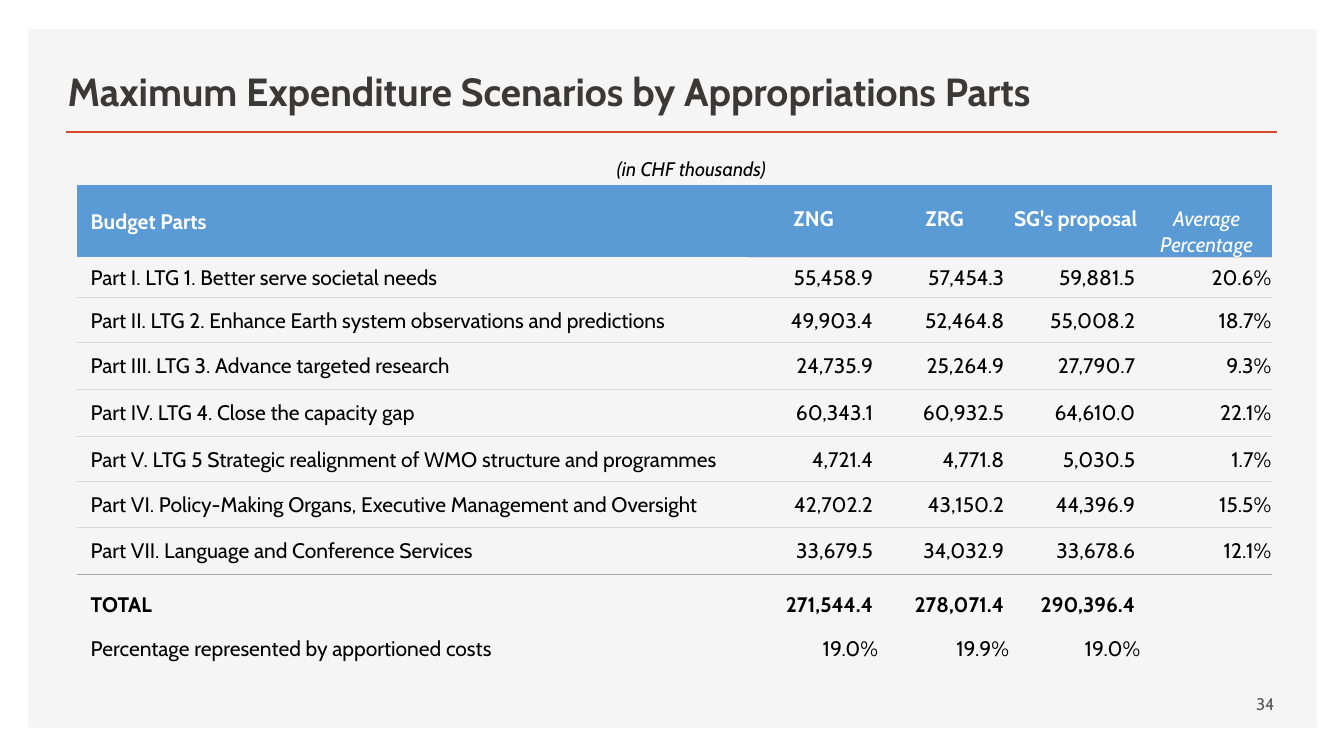
"""Build the slide of maximum expenditure scenarios by appropriations parts."""
from lxml.etree import SubElement
from pptx import Presentation
from pptx.dml.color import RGBColor
from pptx.enum.shapes import MSO_CONNECTOR, MSO_SHAPE
from pptx.enum.text import MSO_ANCHOR, PP_ALIGN
from pptx.oxml import parse_xml
from pptx.oxml.ns import nsdecls, qn
from pptx.util import Inches, Pt

COLOURS = {"panel": "F5F5F5", "accent": "D24726", "title": "3B3838", "number": "595959",
           "header": "5B9BD5", "white": "FFFFFF", "black": "000000",
           "rule": "D9D9D9", "total_rule": "A6A6A6"}
HEADINGS = ["Budget Parts", "ZNG", "ZRG", "SG's proposal", "Average Percentage"]
BUDGET = [
    ["Part I. LTG 1. Better serve societal needs", "55,458.9", "57,454.3", "59,881.5", "20.6%"],
    ["Part II. LTG 2. Enhance Earth system observations and predictions",
     "49,903.4", "52,464.8", "55,008.2", "18.7%"],
    ["Part III. LTG 3. Advance targeted research", "24,735.9", "25,264.9", "27,790.7", "9.3%"],
    ["Part IV. LTG 4. Close the capacity gap", "60,343.1", "60,932.5", "64,610.0", "22.1%"],
    ["Part V. LTG 5 Strategic realignment of WMO structure and programmes",
     "4,721.4", "4,771.8", "5,030.5", "1.7%"],
    ["Part VI. Policy-Making Organs, Executive Management and Oversight",
     "42,702.2", "43,150.2", "44,396.9", "15.5%"],
    ["Part VII. Language and Conference Services", "33,679.5", "34,032.9", "33,678.6", "12.1%"],
    ["TOTAL", "271,544.4", "278,071.4", "290,396.4", ""],
    ["Percentage represented by apportioned costs", "19.0%", "19.9%", "19.0%", ""],
]
COLUMN_SHARES = [49.96] + [9.75] * 4
ROW_SHARES = [2.67, 6.8, 5.33, 6, 6.13, 6.27, 6, 6, 6.27, 8, 3.6]

deck = Presentation()
deck.slide_width, deck.slide_height = Inches(13.33), Inches(7.5)
page = deck.slides.add_slide(deck.slide_layouts[5])


def area(*percents):
    """Turn percentages of the slide's width and height, in turn, into lengths."""
    sides = (deck.slide_width, deck.slide_height)
    return [int(sides[index % 2] * percent / 100) for index, percent in enumerate(percents)]


def write(frame, text, size, colour, align=PP_ALIGN.LEFT, bold=False, italic=False):
    """Put one styled paragraph into a text frame."""
    frame.text = text
    para = frame.paragraphs[0]
    para.alignment = align
    for span in para.runs:
        span.font.name, span.font.size = "Cabin", Pt(size)
        span.font.bold, span.font.italic = bold, italic
        span.font.color.rgb = RGBColor.from_string(COLOURS[colour])


panel = page.shapes.add_shape(MSO_SHAPE.RECTANGLE, *area(2.1, 3.87, 95.87, 92.4))
panel.shadow.inherit = False
panel.fill.solid()
panel.fill.fore_color.rgb = RGBColor.from_string(COLOURS["panel"])
panel.line.fill.background()
page.shapes._spTree.insert(2, panel._element)

title_rule = page.shapes.add_connector(MSO_CONNECTOR.STRAIGHT, *area(4.95, 17.47, 95.05, 17.47))
title_rule.line.color.rgb = RGBColor.from_string(COLOURS["accent"])
title_rule.line.width = Pt(2)
SubElement(title_rule._element.spPr, qn("a:effectLst"))

title = page.shapes.title
title.left, title.top, title.width, title.height = area(4.28, 6.53, 86.5, 9.33)
title.text_frame.vertical_anchor = MSO_ANCHOR.BOTTOM
write(title.text_frame, "Maximum Expenditure Scenarios by Appropriations Parts", 28, "title", bold=True)

page_number = page.shapes.add_textbox(*area(68.72, 90.4, 26.86, 5.33))
page_number.text_frame.word_wrap = True
page_number.text_frame.vertical_anchor = MSO_ANCHOR.MIDDLE
write(page_number.text_frame, "34", 12, "number", PP_ALIGN.RIGHT)

table_frame = page.shapes.add_table(
    len(ROW_SHARES), len(COLUMN_SHARES),
    *area(5.7, 24.53, sum(COLUMN_SHARES), sum(ROW_SHARES)))
table = table_frame.table
table.first_row = table.horz_banding = False
table._tbl.tblPr.find(qn("a:tableStyleId")).text = "{2D5ABB26-0587-4C30-8999-92F81FD0307C}"
for column, share in zip(table.columns, COLUMN_SHARES):
    column.width = area(share)[0]
for row, share in zip(table.rows, ROW_SHARES):
    row.height = area(0, share)[1]

header_top = [HEADINGS[0]] + [""] * 4
header_bottom = [""] + HEADINGS[1:]
last_row = len(ROW_SHARES) - 1
total_row = last_row - 1
for row_index, texts in enumerate([header_top, header_bottom] + BUDGET):
    in_header = row_index < 2
    for column_index, text in enumerate(texts):
        cell = table.cell(row_index, column_index)
        is_label, is_share = column_index == 0, column_index == 4
        cell.margin_left = Inches(0.14 if is_label else 0.01)
        flush = in_header or is_label or is_share or row_index == last_row
        cell.margin_right = Inches(0.01 if flush else 0.06)
        cell.margin_top, cell.margin_bottom = Inches(0.01), 0
        centred = in_header and not is_label
        cell.vertical_anchor = MSO_ANCHOR.TOP if centred else MSO_ANCHOR.MIDDLE
        align = PP_ALIGN.LEFT if is_label else PP_ALIGN.CENTER if in_header else PP_ALIGN.RIGHT
        write(cell.text_frame, text, 15, "white" if in_header else "black", align,
              bold=row_index == total_row or (in_header and not is_share),
              italic=in_header and is_share)
        if not text:
            SubElement(cell.text_frame.paragraphs[0]._p, qn("a:endParaRPr")).set("sz", "1000")
        if in_header:
            cell.fill.solid()
            cell.fill.fore_color.rgb = RGBColor.from_string(COLOURS["header"])
        else:
            cell.fill.background()
        if 1 <= row_index < total_row:
            colour = COLOURS["total_rule" if row_index == total_row - 1 else "rule"]
            cell._tc.tcPr.insert(0, parse_xml(
                f'<a:lnB {nsdecls("a")} w="9525"><a:solidFill>'
                f'<a:srgbClr val="{colour}"/></a:solidFill></a:lnB>'))
table.cell(0, 0).merge(table.cell(1, 0))
table.cell(0, 1).merge(table.cell(0, 4))

caption = page.shapes.add_textbox(*area(45.16, 20.13, 13.95, 4.53))
caption.text_frame.word_wrap = True
write(caption.text_frame, "(in CHF thousands)", 14, "black", italic=True)

deck.save("out.pptx")
